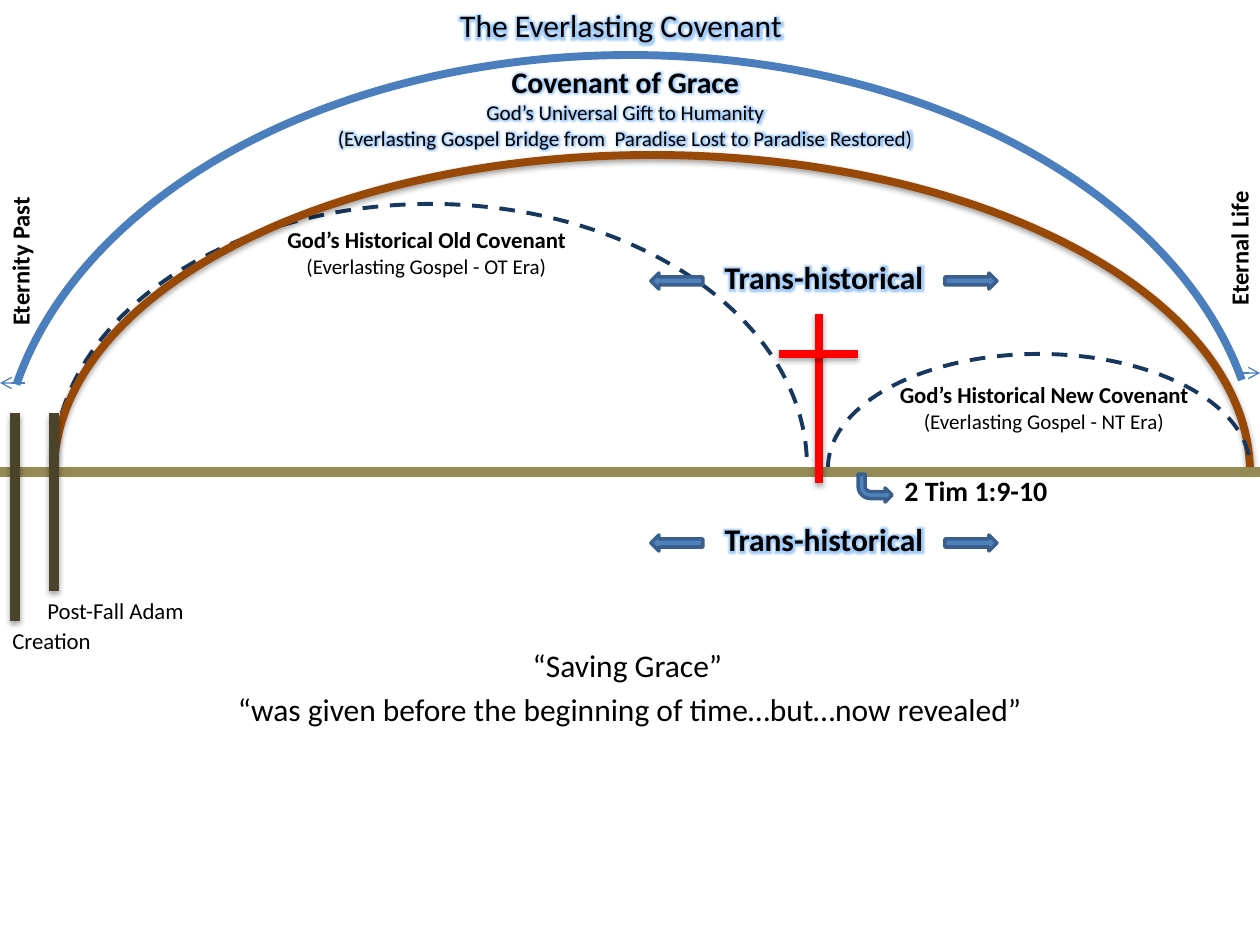
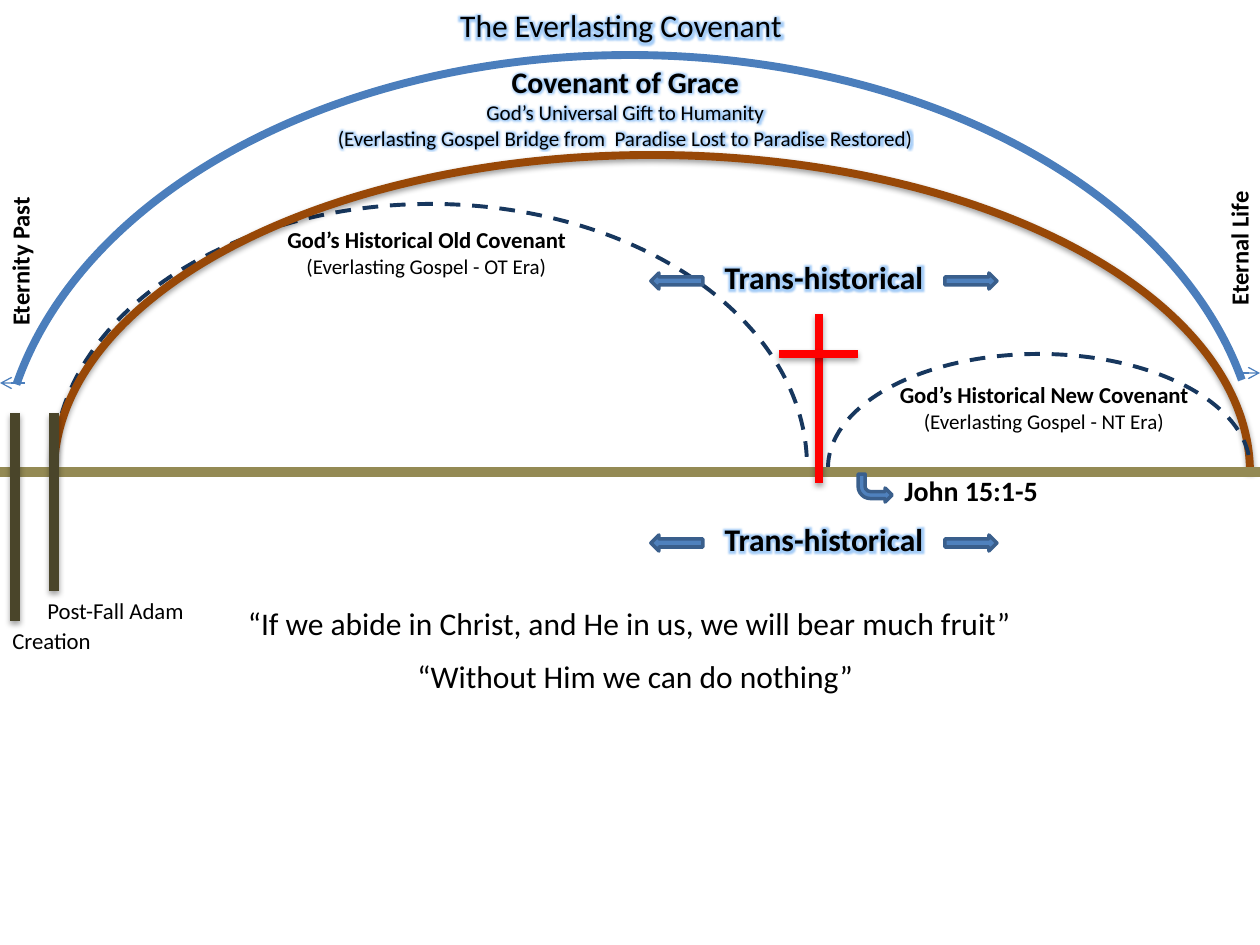
from dataclasses import dataclass
from typing import NamedTuple

from lxml.etree import SubElement
from pptx import Presentation
from pptx.dml.color import RGBColor
from pptx.enum.dml import MSO_LINE
from pptx.enum.shapes import MSO_CONNECTOR, MSO_SHAPE
from pptx.enum.text import MSO_ANCHOR, MSO_AUTO_SIZE, PP_ALIGN
from pptx.oxml.ns import qn
from pptx.util import Emu, Pt

PX_PER_INCH = 126
TITLE_ONLY = 5


@dataclass(frozen=True)
class Theme:
    """Colours, type sizes and line weights shared by the slides."""
    font: str = "Calibri"
    ink: str = "000000"
    eternity: str = "4B7EBC"
    grace: str = "984807"
    history: str = "17375E"
    ground: str = "948A54"
    post: str = "4A452A"
    cross: str = "FF0000"
    arrow_fill: str = "4F81BD"
    arrow_line: str = "3A5F8C"
    glow: str = "1F82ED"
    glow_opacity: int = 40
    heading: int = 18
    grace_heading: int = 17
    reference: int = 16
    era: int = 14
    label: int = 13
    detail: int = 12
    hairline: float = 0.75
    arrow_edge: float = 2
    dashed: float = 2.25
    bold_line: float = 4.5
    thick: float = 6


THEME = Theme()


class Box(NamedTuple):
    """A place on the slide in px."""
    left: int
    top: int
    width: int
    height: int


class Shadow(NamedTuple):
    """A soft shadow cast straight down."""
    opacity: int
    blur: float
    distance: float


class Arc(NamedTuple):
    """An arch over a span of history."""
    box: Box
    start: float
    end: float
    color: str
    width: float
    dashed: bool = False
    shadow: Shadow | None = None


class Rule(NamedTuple):
    """A straight line between two points in px."""
    start: tuple[int, int]
    end: tuple[int, int]
    color: str
    width: float
    shadow: Shadow | None = None
    arrow: bool = False


class Words(NamedTuple):
    """One paragraph with its size and weight."""
    text: str
    size: int
    bold: bool = False


class Label(NamedTuple):
    """A text box with its paragraphs."""
    box: Box
    words: tuple[Words, ...]
    centred: bool = True
    glow: float = 0
    rotation: int = 0


class Lesson(NamedTuple):
    """The part of the diagram that differs by slide."""
    reference: str
    quotes: tuple[tuple[Box, str], ...]


ARC_SHADOW = Shadow(38, 3.15, 1.57)
LINE_SHADOW = Shadow(35, 3.15, 1.81)

ARCS = (
    Arc(Box(54, 204, 753, 525), 107.9, 0, THEME.history, THEME.dashed, dashed=True),
    Arc(Box(54, 155, 1196, 635), 108.53, 215.93, THEME.grace, THEME.bold_line, shadow=ARC_SHADOW),
    Arc(Box(828, 354, 422, 228), 107.9, 215.37, THEME.history, THEME.dashed, dashed=True),
    Arc(Box(0, 55, 1260, 853), 113.39, 210.35, THEME.eternity, THEME.bold_line),
)

RULES = (
    Rule((0, 472), (1260, 472), THEME.ground, THEME.thick),
    Rule((25, 383), (0, 383), THEME.eternity, THEME.hairline, arrow=True),
    Rule((1235, 373), (1260, 373), THEME.eternity, THEME.hairline, arrow=True),
    Rule((54, 413), (54, 591), THEME.post, THEME.thick, LINE_SHADOW),
    Rule((15, 413), (15, 621), THEME.post, THEME.thick, LINE_SHADOW),
    Rule((819, 483), (819, 314), THEME.cross, THEME.bold_line, LINE_SHADOW),
    Rule((779, 354), (858, 354), THEME.cross, THEME.bold_line, LINE_SHADOW),
)

TITLE = Label(Box(398, 0, 446, 86), (Words("The Everlasting Covenant", THEME.heading),), glow=5)

LABELS = (
    Label(Box(243, 220, 367, 66), (
        Words("God’s Historical Old Covenant", THEME.label, True),
        Words("(Everlasting Gospel - OT Era)", THEME.detail))),
    Label(Box(828, 375, 432, 66), (
        Words("God’s Historical New Covenant", THEME.label, True),
        Words("(Everlasting Gospel - NT Era)", THEME.detail))),
    Label(Box(253, 58, 745, 100), (
        Words("Covenant of Grace", THEME.grace_heading, True),
        Words("God’s Universal Gift to Humanity", THEME.detail),
        Words("(Everlasting Gospel Bridge from  Paradise Lost to Paradise Restored)", THEME.detail)),
        glow=5),
    Label(Box(0, 621, 164, 40), (Words("Creation", THEME.label),), centred=False),
    Label(Box(35, 591, 248, 40), (Words("Post-Fall Adam", THEME.label),), centred=False),
    Label(Box(-91, 205, 223, 43), (Words("Eternity Past", THEME.era, True),), centred=False, rotation=270),
    Label(Box(1128, 185, 223, 43), (Words("Eternal Life", THEME.era, True),), centred=False, rotation=270),
)

TRANS_HISTORICAL_TOPS = (252, 514)

LESSONS = (
    Lesson("2 Tim 1:9-10", (
        (Box(147, 640, 961, 50), "“Saving Grace”"),
        (Box(0, 684, 1260, 50), "“was given before the beginning of time…but…now revealed”"))),
    Lesson("John 15:1-5", (
        (Box(220, 598, 819, 50), "“If we abide in Christ, and He in us, we will bear much fruit”"),
        (Box(273, 651, 725, 50), "“Without Him we can do nothing”"))),
)


def px(length: int) -> Emu:
    """Turn px into EMU."""
    return Emu(round(length * 914400 / PX_PER_INCH))


def place(box: Box) -> tuple[Emu, ...]:
    """Give a box in EMU."""
    return tuple(px(length) for length in box)


def add_color(parent, color: str, opacity: int) -> None:
    """Add a partly transparent colour to an effect."""
    element = SubElement(parent, qn("a:srgbClr"), val=color)
    SubElement(element, qn("a:alpha"), val=str(opacity * 1000))


def format_line(shape, color: str, width: float, dashed: bool = False, shadow: Shadow | None = None) -> None:
    """Set the outline and the shadow of a shape or connector."""
    shape.line.color.rgb = RGBColor.from_string(color)
    shape.line.width = Pt(width)
    if dashed:
        shape.line.dash_style = MSO_LINE.DASH
    effects = SubElement(shape._element.spPr, qn("a:effectLst"))
    if shadow:
        outer = SubElement(effects, qn("a:outerShdw"), blurRad=str(Pt(shadow.blur)),
                           dist=str(Pt(shadow.distance)), dir="5400000", rotWithShape="0")
        add_color(outer, THEME.ink, shadow.opacity)


def write_text(paragraph, text: str, *, size: int, bold: bool = False,
               centred: bool = True, glow: float = 0) -> None:
    """Write one formatted run into a paragraph."""
    paragraph.alignment = PP_ALIGN.CENTER if centred else PP_ALIGN.LEFT
    run = paragraph.add_run()
    run.text = text
    run.font.size, run.font.bold = Pt(size), bold
    run.font.color.rgb = RGBColor.from_string(THEME.ink)
    if glow:
        effects = SubElement(run._r.get_or_add_rPr(), qn("a:effectLst"))
        add_color(SubElement(effects, qn("a:glow"), rad=str(Pt(glow))), THEME.glow, THEME.glow_opacity)
    run.font.name = THEME.font


def fill_label(shape, label: Label) -> None:
    """Write a label into a text box or placeholder."""
    frame = shape.text_frame
    frame.word_wrap = True
    frame.vertical_anchor = MSO_ANCHOR.TOP
    for index, words in enumerate(label.words):
        paragraph = frame.add_paragraph() if index else frame.paragraphs[0]
        write_text(paragraph, words.text, size=words.size, bold=words.bold,
                   centred=label.centred, glow=label.glow)


def add_title(slide) -> None:
    """Move and format the title placeholder."""
    title = slide.shapes.title
    title.left, title.top, title.width, title.height = place(TITLE.box)
    fill_label(title, TITLE)
    title.text_frame.auto_size = MSO_AUTO_SIZE.NONE


def add_label(slide, label: Label) -> None:
    """Add a text box that fits its text."""
    shape = slide.shapes.add_textbox(*place(label.box))
    fill_label(shape, label)
    shape.text_frame.auto_size = MSO_AUTO_SIZE.SHAPE_TO_FIT_TEXT
    shape.rotation = label.rotation


def add_arc(slide, arc: Arc) -> None:
    """Add an open arch."""
    shape = slide.shapes.add_shape(MSO_SHAPE.ARC, *place(arc.box))
    shape.adjustments[0], shape.adjustments[1] = arc.start, arc.end
    shape.fill.background()
    format_line(shape, arc.color, arc.width, arc.dashed, arc.shadow)


def add_rule(slide, rule: Rule) -> None:
    """Add a straight line, with an arrowhead if asked."""
    points = (px(length) for length in rule.start + rule.end)
    connector = slide.shapes.add_connector(MSO_CONNECTOR.STRAIGHT, *points)
    format_line(connector, rule.color, rule.width, shadow=rule.shadow)
    if rule.arrow:
        SubElement(connector._element.spPr.find(qn("a:ln")), qn("a:tailEnd"), type="arrow")


def add_block_arrow(slide, kind: MSO_SHAPE, box: Box, flipped: bool = False, rotation: int = 0) -> None:
    """Add a filled arrow, mirrored or turned if asked."""
    shape = slide.shapes.add_shape(kind, *place(box))
    shape.rotation = rotation
    shape.fill.solid()
    shape.fill.fore_color.rgb = RGBColor.from_string(THEME.arrow_fill)
    format_line(shape, THEME.arrow_line, THEME.arrow_edge)
    if flipped:
        shape._element.spPr.find(qn("a:xfrm")).set("flipH", "1")


def add_trans_historical(slide, top: int) -> None:
    """Add the glowing words between two outward arrows."""
    words = Words("Trans-historical", THEME.heading, True)
    add_label(slide, Label(Box(677, top, 294, 50), (words,), glow=8))
    for left, flipped in ((651, True), (945, False)):
        add_block_arrow(slide, MSO_SHAPE.RIGHT_ARROW, Box(left, top + 21, 52, 16), flipped)


def add_lesson(slide, lesson: Lesson) -> None:
    """Add the Bible reference and its quotes."""
    add_block_arrow(slide, MSO_SHAPE.BENT_ARROW, Box(858, 474, 34, 28), flipped=True, rotation=180)
    reference = Words(lesson.reference, THEME.reference, True)
    add_label(slide, Label(Box(892, 467, 231, 47), (reference,), centred=False))
    for box, quote in lesson.quotes:
        add_label(slide, Label(box, (Words(quote, THEME.heading),)))


def add_covenant_slide(presentation, lesson: Lesson) -> None:
    """Add the covenant diagram with one lesson."""
    slide = presentation.slides.add_slide(presentation.slide_layouts[TITLE_ONLY])
    add_title(slide)
    for arc in ARCS:
        add_arc(slide, arc)
    for rule in RULES:
        add_rule(slide, rule)
    for label in LABELS:
        add_label(slide, label)
    for top in TRANS_HISTORICAL_TOPS:
        add_trans_historical(slide, top)
    add_lesson(slide, lesson)


def main() -> None:
    """Build and save the presentation."""
    presentation = Presentation()
    presentation.slide_width, presentation.slide_height = px(1260), px(945)
    for lesson in LESSONS:
        add_covenant_slide(presentation, lesson)
    presentation.save("out.pptx")


if __name__ == "__main__":
    main()
